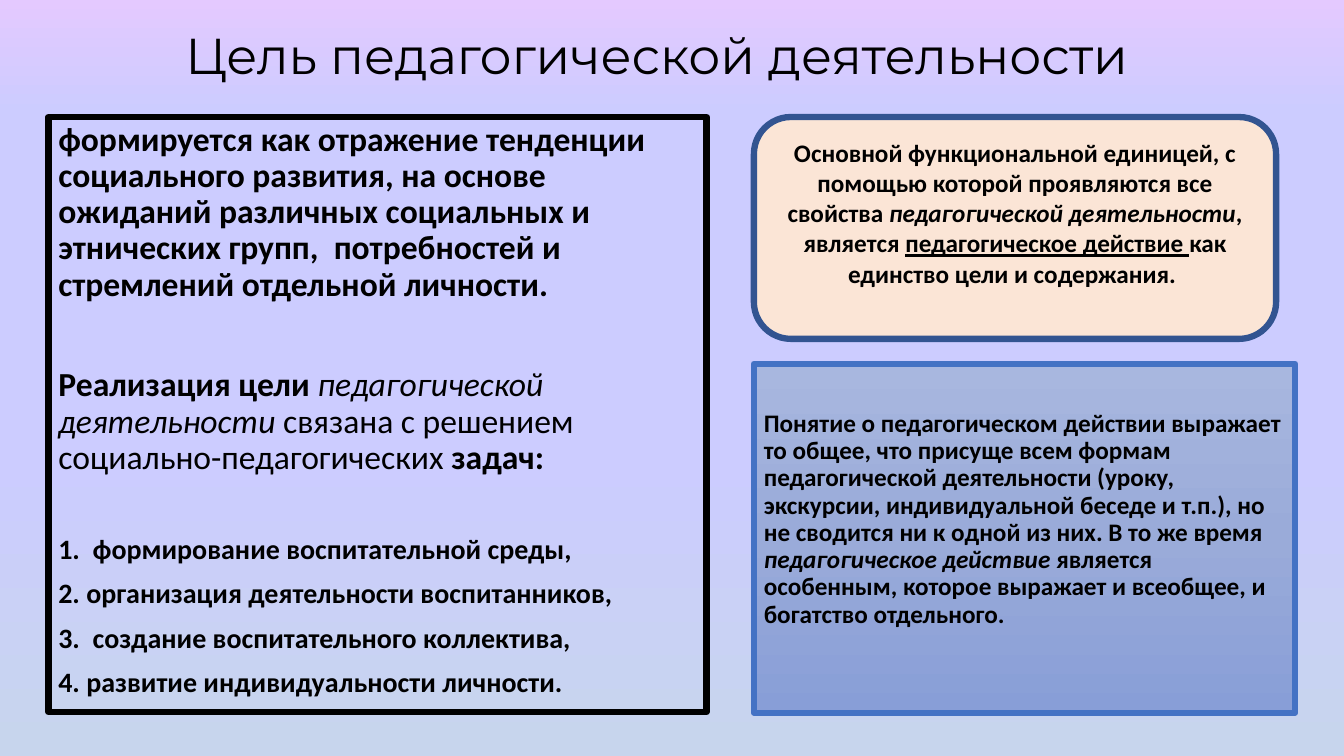
from lxml import etree
from pptx import Presentation
from pptx import util as u
from pptx.dml.color import RGBColor
from pptx.enum import shapes, text
from pptx.oxml.ns import qn

BLACK = "000000"
SKY = [(0, "E4C9FF"), (15, "CCCCFF"), (35, "CCCCFF"), (60, "CCCCFF"), (100, "C7D5ED")]
STEEL = [(0, "A8B7DF"), (50, "9AABD9"), (100, "889ED7")]
AIM = [("формируется как отражение тенденции социального развития, на основе ожиданий "
        "различных социальных и этнических групп,  потребностей и стремлений "
        "отдельной личности.", "b")]
TASKS_LEAD = [("Реализация цели ", "b"), ("педагогической деятельности ", "i"),
              ("связана с решением социально-педагогических ", ""), ("задач:", "b")]
TASKS = ["1.  формирование воспитательной среды,",
         "2. организация деятельности воспитанников,",
         "3.  создание воспитательного коллектива,",
         "4. развитие индивидуальности личности."]
UNIT = [("Основной функциональной единицей, с помощью которой проявляются все свойства ", "b"),
        ("педагогической деятельности", "bi"), (", является ", "b"),
        ("педагогическое действие ", "bu"), ("как единство цели и содержания. ", "b")]
CONCEPT = [("Понятие о педагогическом действии выражает то общее, что присуще всем формам "
            "педагогической деятельности (уроку, экскурсии, индивидуальной беседе и т.п.), "
            "но не сводится ни к одной из них. В то же время ", "b"),
           ("педагогическое действие ", "bi"),
           ("является особенным, которое выражает и всеобщее, и богатство отдельного.", "b")]


def color(value):
    """Turn a hex string into a colour."""
    return RGBColor.from_string(value)


def shade(fill, owner, stops):
    """Give a fill a top-to-bottom gradient with the stops listed."""
    fill.gradient()
    fill.gradient_angle = 270
    stop_list = next(owner.iter(qn("a:gsLst")))
    for old_stop in list(stop_list):
        stop_list.remove(old_stop)
    for percent, value in stops:
        stop = etree.SubElement(stop_list, qn("a:gs"), pos=str(percent * 1000))
        etree.SubElement(stop, qn("a:srgbClr"), val=value)


def write(para, spans, size, before=0, spacing=0.9, align=text.PP_ALIGN.LEFT, font="Calibri"):
    """Fill a paragraph with spans whose style letters are b, i and u."""
    para.alignment = align
    para.line_spacing = spacing
    para.space_before = u.Pt(before)
    for words, style in spans:
        span = para.add_run()
        span.text = words
        span.font.name = font
        span.font.size = u.Pt(size)
        span.font.color.rgb = color(BLACK)
        span.font.bold = "b" in style
        span.font.italic = "i" in style
        span.font.underline = "u" in style


def add_panel(page, kind, box, line, anchor=text.MSO_ANCHOR.TOP):
    """Add an outlined shape ready for wrapped text."""
    panel = page.shapes.add_shape(kind, *map(u.Cm, box))
    panel.shadow.inherit = False
    panel.fill.background()
    panel.line.color.rgb = color(line)
    panel.line.width = u.Pt(4.5)
    panel.text_frame.word_wrap = True
    panel.text_frame.vertical_anchor = anchor
    return panel


def add_title(page, box):
    """Place and fill the slide title."""
    title = page.shapes.title
    title.left, title.top, title.width, title.height = map(u.Cm, box)
    title.text_frame.vertical_anchor = text.MSO_ANCHOR.MIDDLE
    write(title.text_frame.paragraphs[0], [("Цель педагогической деятельности ", "")], 36,
          align=text.PP_ALIGN.CENTER, font="Montserrat")


def add_aim(page, box):
    """Describe the aim and list the tasks that realise it."""
    frame = add_panel(page, shapes.MSO_SHAPE.RECTANGLE, box, BLACK).text_frame
    write(frame.paragraphs[0], AIM, 24)
    write(frame.add_paragraph(), TASKS_LEAD, 24, before=46)
    for index, task in enumerate(TASKS):
        write(frame.add_paragraph(), [(task, "b")], 20, before=10 if index else 42)


def add_unit(page, box):
    """Name the main functional unit in a rounded panel."""
    panel = add_panel(page, shapes.MSO_SHAPE.ROUNDED_RECTANGLE, box, "325491",
                      text.MSO_ANCHOR.MIDDLE)
    panel.fill.solid()
    panel.fill.fore_color.rgb = color("FBE5D6")
    panel.text_frame.margin_bottom = u.Cm(0.9)
    write(panel.text_frame.paragraphs[0], UNIT, 18, spacing=1.0, align=text.PP_ALIGN.CENTER)


def add_concept(page, box):
    """Explain the concept of pedagogical action in a shaded panel."""
    panel = add_panel(page, shapes.MSO_SHAPE.RECTANGLE, box, "4472C4")
    shade(panel.fill, panel.element, STEEL)
    panel.text_frame.margin_top = u.Cm(1.18)
    write(panel.text_frame.paragraphs[0], CONCEPT, 18)


def main():
    """Build the slide and save it."""
    deck = Presentation()
    deck.slide_width, deck.slide_height = u.Cm(33.87), u.Cm(19.05)
    page = deck.slides.add_slide(deck.slide_layouts[5])
    shade(page.background.fill, page.element, SKY)
    add_title(page, (0.79, 0, 31.85, 2.95))
    add_aim(page, (1.22, 2.95, 16.59, 14.99))
    add_concept(page, (19, 9.17, 13.64, 8.79))
    add_unit(page, (19, 2.95, 13.16, 5.59))
    deck.save("out.pptx")


if __name__ == "__main__":
    main()
